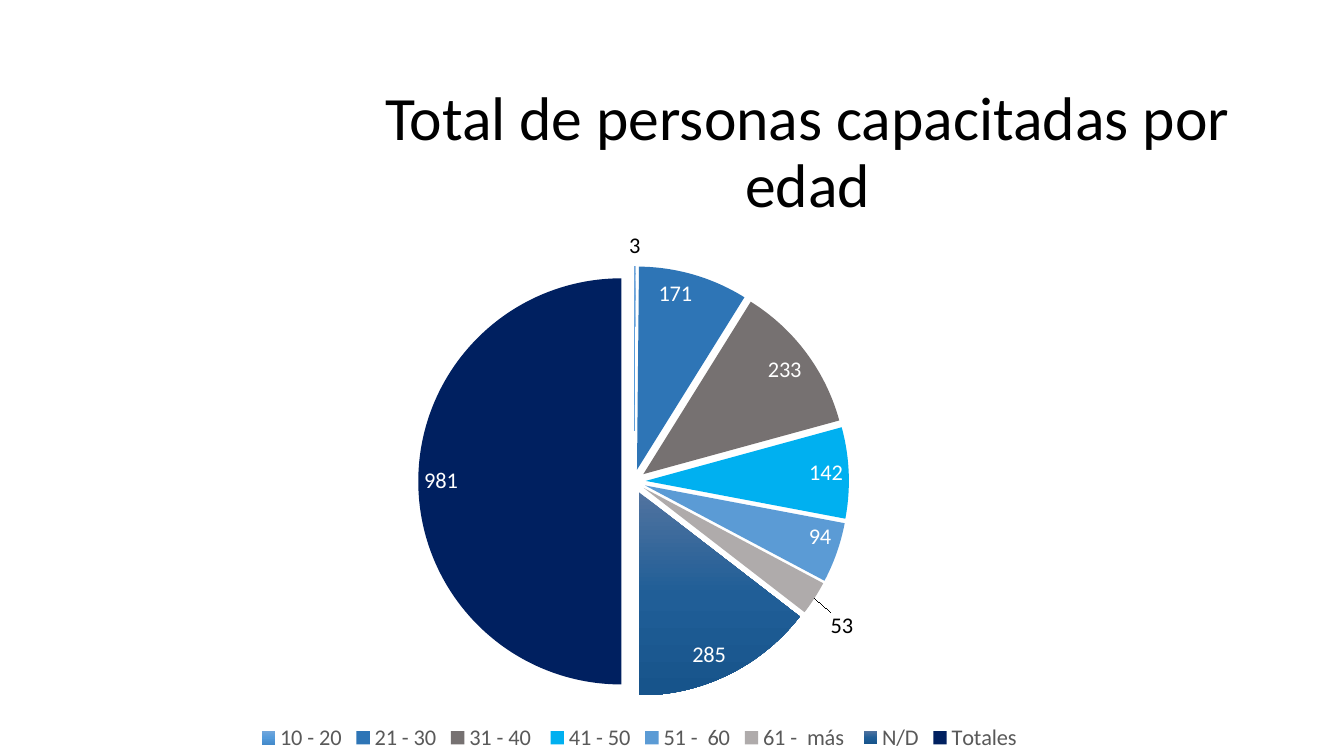
from copy import deepcopy

from pptx import Presentation
from pptx.chart.data import CategoryChartData
from pptx.dml.color import RGBColor
from pptx.enum.chart import XL_CHART_TYPE as ChartType
from pptx.enum.chart import XL_LABEL_POSITION as LabelPosition
from pptx.enum.chart import XL_LEGEND_POSITION as LegendPosition
from pptx.enum.text import MSO_ANCHOR as Anchor
from pptx.enum.text import PP_ALIGN as Align
from pptx.oxml import parse_xml
from pptx.oxml.ns import nsdecls
from pptx.util import Inches, Pt

FONT = "Calibri"
COLORS = {
    "black": "000000", "white": "FFFFFF", "legend": "595959",
    "blue": "2E75B6", "gray": "767171", "cyan": "00B0F0",
    "light_blue": "5B9BD5", "silver": "AFABAB", "navy": "002060",
}
GRADIENTS = {
    "sky": ["71A6DB", "559BDB", "448ACA"],
    "steel": ["51739F", "205E97", "17548B"],
}
AGE_GROUPS = [
    ("10 - 20", 3, "sky"),
    ("21 - 30", 171, "blue"),
    ("31 - 40 ", 233, "gray"),
    ("41 - 50", 142, "cyan"),
    ("51 -  60", 94, "light_blue"),
    ("61 -  más ", 53, "silver"),
    ("N/D", 285, "steel"),
    ("Totales", 981, "navy"),
]
OUTSIDE_LABELS = {0: (0, 0), 5: (0.01, 0.02)}
EXPLOSION = 6
PIE_AREA = {"x": 0.3, "y": 0.09, "w": 0.39, "h": 0.8}


def style_font(font, size, color):
    """Apply the slide typeface with a size and a named colour."""
    font.name = FONT
    font.size = Pt(size)
    font.color.rgb = RGBColor.from_string(COLORS[color])


def layout_xml(values, target=""):
    """Return a manual chart layout element."""
    fields = "".join(f'<c:{name} val="{value}"/>' for name, value in values.items())
    return parse_xml(
        f'<c:layout {nsdecls("c")}><c:manualLayout>{target}{fields}'
        "</c:manualLayout></c:layout>"
    )


def add_title(slide, left, top, width, height):
    """Fill the title placeholder inside the given box."""
    title = slide.shapes.title
    title.left, title.top, title.width, title.height = left, top, width, height
    frame = title.text_frame
    frame.text = "Total de personas capacitadas por edad"
    frame.word_wrap = True
    frame.vertical_anchor = Anchor.TOP
    frame.margin_top = 0
    paragraph = frame.paragraphs[0]
    paragraph.alignment = Align.CENTER
    paragraph.line_spacing = 0.9
    style_font(paragraph.runs[0].font, 44, "black")


def fill_slice(series, index, color):
    """Paint one slice with a solid colour or a vertical gradient."""
    fill = series.points[index].format.fill
    if color in COLORS:
        fill.solid()
        fill.fore_color.rgb = RGBColor.from_string(COLORS[color])
        return
    fill.gradient()
    fill.gradient_angle = 270
    stop_list = series._element.xpath(f'c:dPt[c:idx/@val="{index}"]//a:gsLst')[0]
    stop_list.append(deepcopy(stop_list[0]))
    for step, (stop, value) in enumerate(zip(fill.gradient_stops, GRADIENTS[color])):
        stop.position = step / 2
        stop.color.rgb = RGBColor.from_string(value)


def label_slices(series):
    """Show values inside the slices, and outside the narrow ones."""
    labels = series.data_labels
    labels.show_value = True
    labels.position = LabelPosition.INSIDE_END
    style_font(labels.font, 16, "white")
    for index, (shift_x, shift_y) in OUTSIDE_LABELS.items():
        label = series.points[index].data_label
        style_font(label.font, 16, "black")
        label.position = LabelPosition.OUTSIDE_END
        if shift_x or shift_y:
            label_index = series._element.xpath(f'.//c:dLbl/c:idx[@val="{index}"]')[0]
            label_index.addnext(layout_xml({"x": shift_x, "y": shift_y}))


def add_age_chart(slide, left, top, width, height):
    """Draw the exploded pie of trained people by age inside the given box."""
    data = CategoryChartData()
    data.categories = [name for name, _, _ in AGE_GROUPS]
    data.add_series("Series 1", [value for _, value, _ in AGE_GROUPS])
    chart = slide.shapes.add_chart(ChartType.PIE, left, top, width, height, data).chart
    chart.has_title = False
    style_font(chart.font, 16, "black")
    chart.has_legend = True
    chart.legend.position = LegendPosition.BOTTOM
    chart.legend.include_in_layout = False
    style_font(chart.legend.font, 16, "legend")

    plot = chart.plots[0]
    plot.vary_by_categories = True
    series = plot.series[0]
    series.format.line.fill.background()
    explosion = f'<c:explosion {nsdecls("c")} val="{EXPLOSION}"/>'
    series._element.xpath("c:spPr")[0].addnext(parse_xml(explosion))
    for index, (_, _, color) in enumerate(AGE_GROUPS):
        fill_slice(series, index, color)
        series.points[index].format.line.fill.background()
    for point_index in series._element.xpath("c:dPt/c:idx"):
        point_index.addnext(parse_xml(explosion))
    label_slices(series)

    plot_area = chart._chartSpace.xpath("c:chart/c:plotArea")[0]
    for layout in plot_area.xpath("c:layout"):
        plot_area.remove(layout)
    modes = '<c:layoutTarget val="inner"/><c:xMode val="edge"/><c:yMode val="edge"/>'
    plot_area.insert(0, layout_xml(PIE_AREA, modes))


def main():
    """Build and save the presentation."""
    presentation = Presentation()
    presentation.slide_width = Inches(13.33)
    presentation.slide_height = Inches(7.5)
    slide = presentation.slides.add_slide(presentation.slide_layouts[5])
    add_title(slide, Inches(3.09), Inches(0.87), Inches(9.84), Inches(1.94))
    add_age_chart(slide, Inches(0.77), Inches(2.16), Inches(11.14), Inches(5.34))
    presentation.save("out.pptx")


if __name__ == "__main__":
    main()
